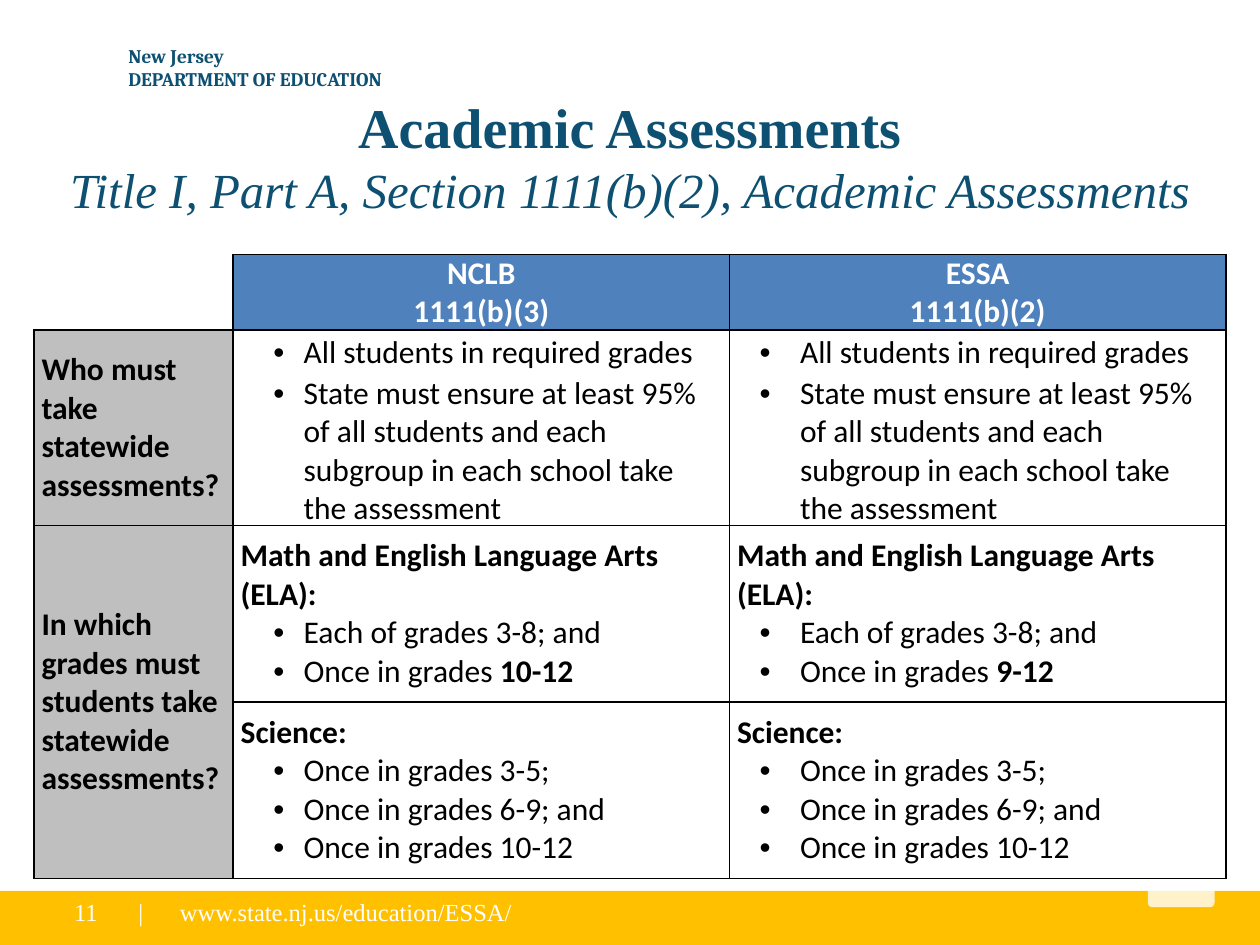
"""Build the slide comparing NCLB and ESSA academic assessment rules."""
from dataclasses import dataclass, field
from typing import Any, Optional

from lxml import etree
from pptx import Presentation
from pptx import util as u
from pptx.dml import color
from pptx.enum import shapes, text
from pptx.oxml import ns

NAVY, WHITE, BLACK = "0D5072", "FFFFFF", "000000"
GOLD, BLUE, GREY = "FFC000", "4F81BD", "BFBFBF"
SERIF = "Times New Roman"


@dataclass
class Run:
    words: str
    style: dict[str, Any] = field(default_factory=dict)


@dataclass
class Para:
    runs: list[Run]
    align: Any = text.PP_ALIGN.LEFT
    hang: Optional[float] = None
    tab: Optional[float] = None


@dataclass
class Label:
    box: tuple[float, float, float, float]
    paras: list[Para]
    style: dict[str, Any]
    anchor: Any = text.MSO_ANCHOR.TOP


@dataclass
class Entry:
    row: int
    col: int
    paras: list[Para] = field(default_factory=list)
    fill: Optional[str] = None
    ink: str = BLACK
    sides: str = "LRTB"


def rgb(code: str) -> color.RGBColor:
    return color.RGBColor.from_string(code)


def apply(target: Any, values: dict[str, Any]) -> None:
    for name, value in values.items():
        setattr(target, name, value)


def add_xml(parent: Any, tag: str, **attributes: Any) -> Any:
    return etree.SubElement(parent, ns.qn(tag), {k: str(v) for k, v in attributes.items()})


def write(frame: Any, paras: list[Para], style: dict[str, Any], ink: str) -> None:
    for index, para in enumerate(paras):
        line = frame.add_paragraph() if index else frame.paragraphs[0]
        line.alignment = para.align
        props = line._p.get_or_add_pPr()
        if para.hang:
            props.set("marL", str(u.Inches(0.5)))
            props.set("indent", str(-u.Inches(para.hang)))
            add_xml(props, "a:buFont", typeface="Arial")
            add_xml(props, "a:buChar", char="•")
        if para.tab:
            add_xml(add_xml(props, "a:tabLst"), "a:tab", pos=u.Inches(para.tab), algn="l")
        for part in para.runs:
            run = line.add_run()
            run.text = part.words.rstrip("\n")
            apply(run.font, style | part.style)
            run.font.color.rgb = rgb(ink)
            if part.words.endswith("\n"):
                line.add_line_break()


def add_label(slide: Any, label: Label, ink: str) -> None:
    frame = slide.shapes.add_textbox(*map(u.Inches, label.box)).text_frame
    apply(frame, {"word_wrap": True, "vertical_anchor": label.anchor})
    write(frame, label.paras, label.style, ink)


def add_block(slide: Any, kind: Any, box: tuple[float, ...], fill: str) -> Any:
    block = slide.shapes.add_shape(kind, *map(u.Inches, box))
    block.shadow.inherit = False
    block.fill.solid()
    block.fill.fore_color.rgb = rgb(fill)
    block.line.fill.background()
    return block


def draw_borders(cell: Any, sides: str) -> None:
    props = cell._tc.get_or_add_tcPr()
    for side in "LRTB":
        edge = add_xml(props, f"a:ln{side}", w=u.Pt(1))
        if side in sides:
            add_xml(add_xml(edge, "a:solidFill"), "a:srgbClr", val=BLACK)
        else:
            add_xml(edge, "a:noFill")


def fill_cell(table: Any, entry: Entry) -> None:
    cell = table.cell(entry.row, entry.col)
    apply(cell, {"margin_left": u.Inches(0.06), "margin_right": u.Inches(0.06),
                 "margin_top": 0, "margin_bottom": 0, "vertical_anchor": text.MSO_ANCHOR.MIDDLE})
    draw_borders(cell, entry.sides)
    if entry.fill:
        cell.fill.solid()
        cell.fill.fore_color.rgb = rgb(entry.fill)
    else:
        cell.fill.background()
    write(cell.text_frame, entry.paras, {"name": "Calibri", "size": u.Pt(18)}, entry.ink)


def heading(words: str, align: Any = text.PP_ALIGN.LEFT) -> Para:
    return Para([Run(words, {"bold": True})], align)


def bullet(hang: float, words: str, strong: str = "") -> Para:
    runs = [Run(words, {"bold": False})]
    return Para(runs + ([Run(strong, {"bold": True})] if strong else []), hang=hang)


def law_column(col: int, law: str, section: str, hang: float, high_school: str) -> list[Entry]:
    center = text.PP_ALIGN.CENTER
    return [
        Entry(0, col, [heading(law, center), heading(section, center)], BLUE, WHITE),
        Entry(1, col, [bullet(hang, "All students in required grades")], sides="LRT"),
        Entry(2, col, [bullet(hang, "State must ensure at least 95% of all students and each "
                                    "subgroup in each school take the assessment")], sides="LRB"),
        Entry(3, col, [heading("Math and English Language Arts (ELA):"),
                       bullet(hang, "Each of grades 3-8; and"),
                       bullet(hang, "Once in grades ", high_school)]),
        Entry(4, col, [heading("Science:")] + [bullet(hang, f"Once in grades {grades}")
                                               for grades in ("3-5;", "6-9; and", "10-12")]),
    ]


def add_comparison(slide: Any) -> None:
    widths, heights = (1.58, 3.94, 3.94), (0.6, 0.35, 1.2, 1.4, 1.4)
    box = (0.27, 2.02, sum(widths), sum(heights))
    table = slide.shapes.add_table(len(heights), len(widths), *map(u.Inches, box)).table
    apply(table, {"first_row": False, "horz_banding": False})
    for column, width in zip(table.columns, widths):
        column.width = u.Inches(width)
    for row, height in zip(table.rows, heights):
        row.height = u.Inches(height)
    questions = {1: "Who must take statewide assessments?",
                 3: "In which grades must students take statewide assessments?"}
    entries = [Entry(0, 0, sides="RB")]
    for row, question in questions.items():
        table.cell(row, 0).merge(table.cell(row + 1, 0))
        entries += [Entry(row, 0, [heading(question)], GREY), Entry(row + 1, 0, fill=GREY)]
    entries += law_column(1, "NCLB", "1111(b)(3)", 0.24, "10-12")
    entries += law_column(2, "ESSA", "1111(b)(2)", 0.32, "9-12")
    for entry in entries:
        fill_cell(table, entry)


def main() -> None:
    deck = Presentation()
    apply(deck, {"slide_width": u.Inches(10), "slide_height": u.Inches(7.5)})
    slide = deck.slides.add_slide(deck.slide_layouts[6])
    footer_style = {"name": SERIF, "size": u.Pt(14)}
    middle = text.MSO_ANCHOR.MIDDLE
    department = Label((0.92, 0.3, 2.5, 0.47),
                       [Para([Run("New Jersey")]), Para([Run("DEPARTMENT OF EDUCATION")])],
                       {"name": "Cambria", "size": u.Pt(11), "bold": True}, middle)
    title = Label((0, 0.76, 10, 0.95), [Para([
        Run("Academic Assessments\n", {"size": u.Pt(32), "bold": True}),
        Run("Title I, Part A, Section 1111(b)(2), Academic Assessments",
            {"size": u.Pt(28), "bold": False, "italic": True}),
    ], text.PP_ALIGN.CENTER)], {"name": SERIF}, middle)
    address = Label((1, 7.07, 3.25, 0.34),
                    [Para([Run("|\twww.state.nj.us/education/ESSA/")], tab=0.33)], footer_style)
    page = Label((0.49, 7.07, 0.43, 0.34), [Para([Run("11")])], footer_style)

    add_block(slide, shapes.MSO_SHAPE.RECTANGLE, (0, 7.07, 10, 0.43), GOLD)
    add_label(slide, department, NAVY)
    for label in (address, page):
        add_label(slide, label, WHITE)
    tab = add_block(slide, shapes.MSO_SHAPE.ROUNDED_RECTANGLE, (9.11, 6.98, 0.53, 0.22), WHITE)
    add_xml(tab.fill._xPr.find(".//" + ns.qn("a:srgbClr")), "a:alpha", val=79000)
    add_label(slide, title, NAVY)
    add_comparison(slide)
    deck.save("out.pptx")


if __name__ == "__main__":
    main()
